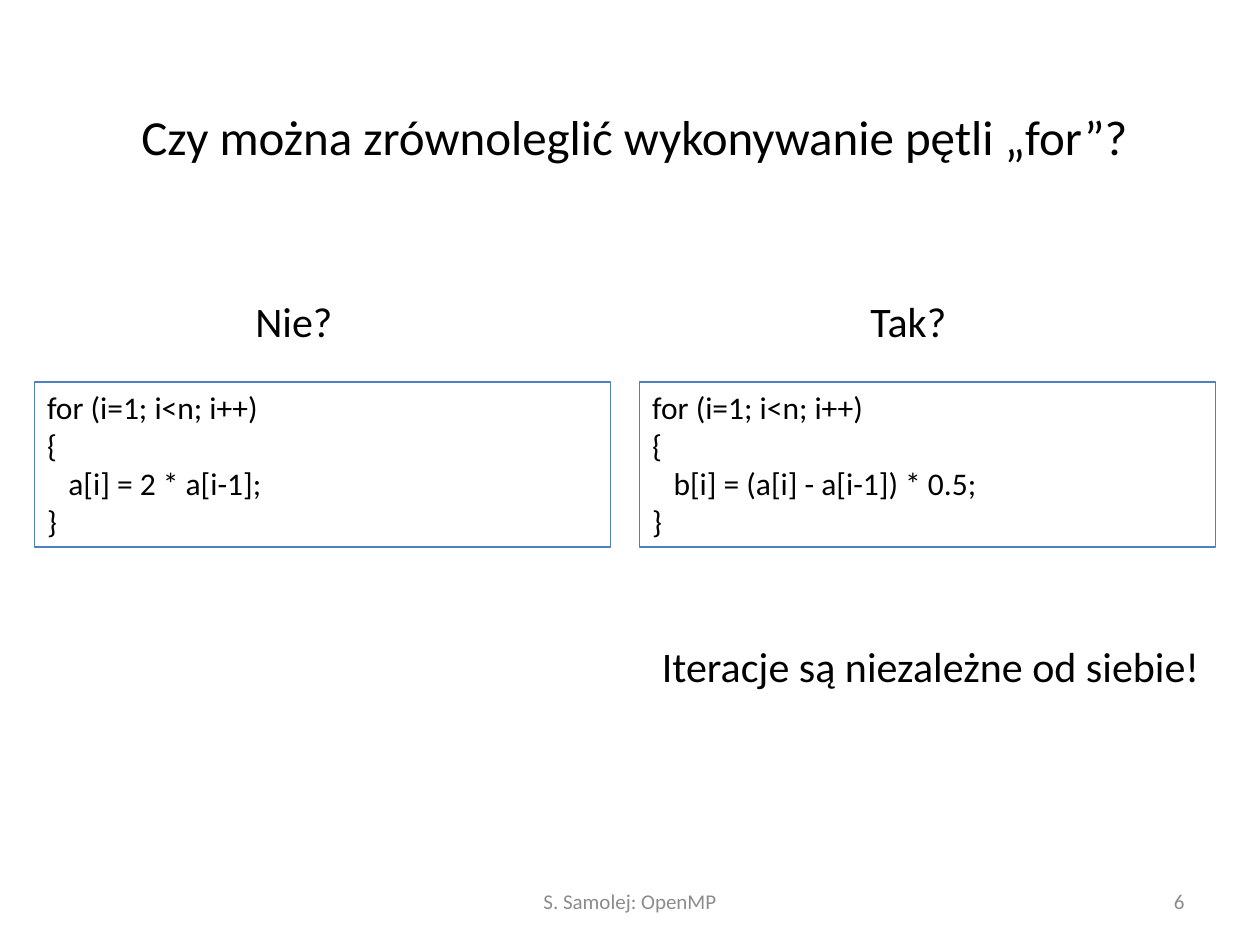
from dataclasses import dataclass

from pptx import Presentation
from pptx.dml.color import RGBColor
from pptx.enum.shapes import MSO_SHAPE
from pptx.enum.text import MSO_ANCHOR, MSO_AUTO_SIZE, PP_ALIGN
from pptx.util import Pt

RECT = MSO_SHAPE.RECTANGLE
TOP, MIDDLE = MSO_ANCHOR.TOP, MSO_ANCHOR.MIDDLE
LEFT, CENTER, RIGHT = PP_ALIGN.LEFT, PP_ALIGN.CENTER, PP_ALIGN.RIGHT
FIXED = MSO_AUTO_SIZE.NONE


@dataclass(frozen=True)
class Theme:
    """Hold the colours, font and type sizes."""
    font: str = "Calibri"
    ink: RGBColor = RGBColor(0, 0, 0)
    muted: RGBColor = RGBColor(0x8C, 0x8C, 0x8C)
    edge: RGBColor = RGBColor(0x4F, 0x81, 0xBD)
    title: int = 28
    label: int = 24
    code: int = 18
    foot: int = 12


THEME = Theme()


def style(frame, size, color=THEME.ink, align=LEFT, anchor=TOP):
    """Format all the text in a frame."""
    frame.word_wrap = True
    frame.auto_size = FIXED
    frame.vertical_anchor = anchor
    for para in frame.paragraphs:
        para.alignment = align
        for run in para.runs:
            run.font.name = THEME.font
            run.font.size = Pt(size)
            run.font.color.rgb = color


def add_text(slide, box, text, size, **look):
    """Add a text box and return its frame."""
    frame = slide.shapes.add_textbox(*map(Pt, box)).text_frame
    frame.text = text
    style(frame, size, **look)
    return frame


def add_title(slide, box, text):
    """Fill and place the title."""
    title = slide.shapes.title
    title.left, title.top, title.width, title.height = map(Pt, box)
    title.text_frame.text = text
    style(title.text_frame, THEME.title, align=CENTER, anchor=MIDDLE)


def add_loop(slide, box, label, inset, body):
    """Add a label and, below it, a framed loop."""
    left, top, width, height = box
    add_text(slide, (left + inset, top, 63, 36), label, THEME.label)
    code = slide.shapes.add_shape(
        RECT, Pt(left), Pt(top + 53), Pt(width), Pt(height - 53))
    code.shadow.inherit = False
    code.fill.background()
    code.line.color.rgb = THEME.edge
    code.line.width = Pt(0.75)
    frame = code.text_frame
    frame.text = "\n".join(("for (i=1; i<n; i++)", "{", body, "}"))
    style(frame, THEME.code)
    frame.paragraphs[2]._p.get_or_add_pPr().set("marL", str(Pt(12.2)))


def add_note(slide, box, text):
    """Add the remark under a loop."""
    frame = add_text(slide, box, text, THEME.label)
    frame.margin_left = Pt(12.6)


def add_footer(slide, box, text, number):
    """Add the footer text and the slide number."""
    left, top, width, height = box
    look = {"color": THEME.muted, "anchor": MIDDLE}
    add_text(slide, (left, top, 228, height), text, THEME.foot,
             align=CENTER, **look)
    add_text(slide, (left + width - 168, top, 168, height), number,
             THEME.foot, align=RIGHT, **look)


def main():
    """Build and save the slide."""
    deck = Presentation()
    deck.slide_width, deck.slide_height = Pt(720), Pt(540)
    slide = deck.slides.add_slide(deck.slide_layouts[5])
    add_title(slide, (36, 21.6, 653, 112.3),
              "Czy można zrównoleglić wykonywanie pętli „for”?")
    add_loop(slide, (19.8, 165.3, 329, 147.3), "Nie?", 119,
             "a[i] = 2 * a[i-1];")
    add_loop(slide, (365.6, 165.3, 329, 147.3), "Tak?", 124.7,
             "b[i] = (a[i] - a[i-1]) * 0.5;")
    add_note(slide, (365.6, 362.2, 329, 36),
             "Iteracje są niezależne od siebie!")
    add_footer(slide, (246, 500.5, 438, 28.8), "S. Samolej: OpenMP", "6")
    deck.save("out.pptx")


if __name__ == "__main__":
    main()
